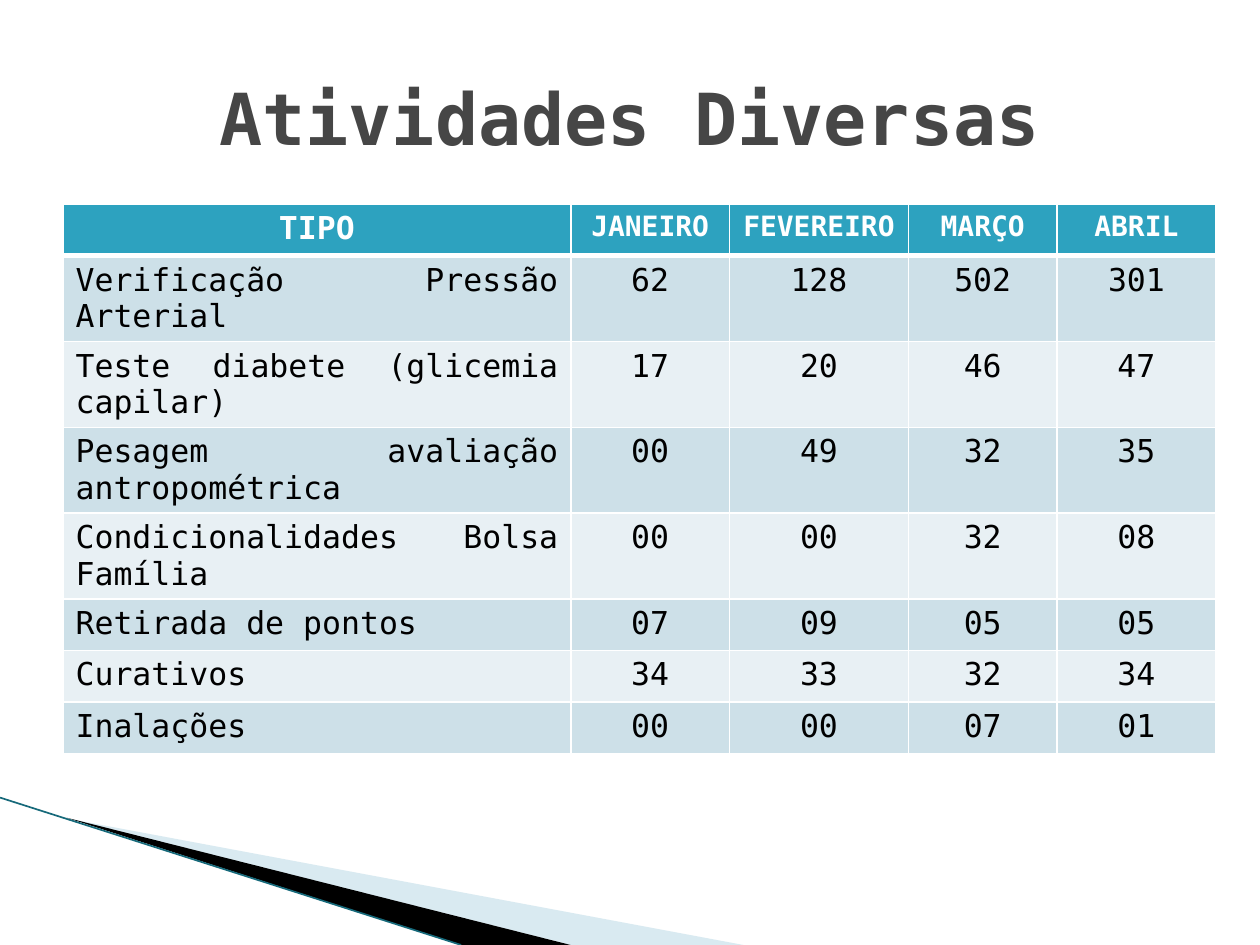
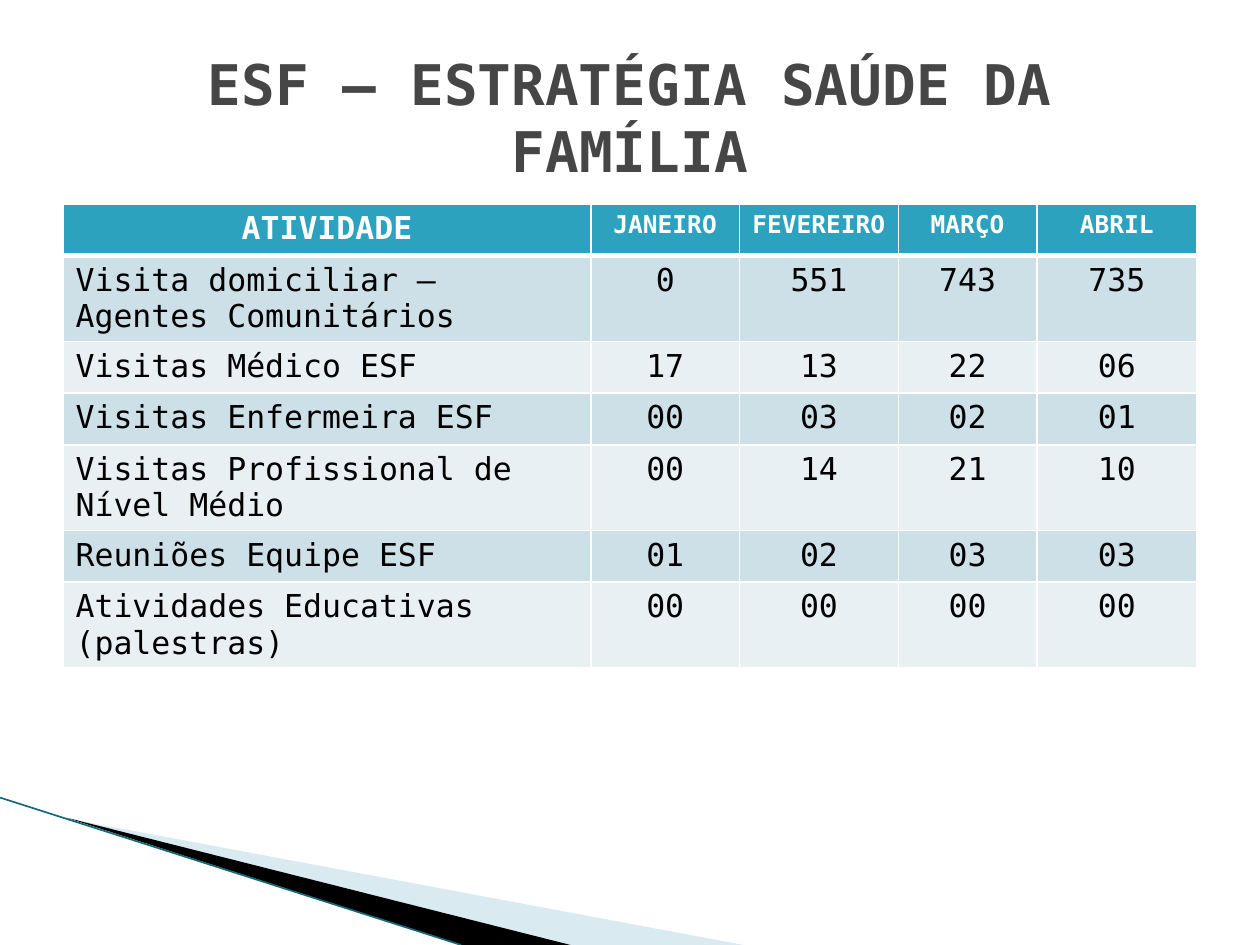
from dataclasses import dataclass

from lxml.etree import SubElement
from pptx import Presentation
from pptx.dml.color import RGBColor
from pptx.enum.shapes import MSO_CONNECTOR
from pptx.enum.text import MSO_ANCHOR, PP_ALIGN
from pptx.oxml.ns import qn
from pptx.util import Inches, Pt


@dataclass(frozen=True)
class Theme:
    font: str = "DejaVu Sans Mono"
    title: str = "464646"
    header: str = "2DA2BF"
    bands: tuple = ("CDE0E8", "E8F0F4")
    body: str = "000000"
    white: str = "FFFFFF"
    wedge_light: str = "A0CBDC"
    wedge_dark: str = "000000"
    edge: str = "16697A"
    text_size: int = 18
    border: int = 1
    header_border: int = 3


THEME = Theme()
TITLE_BOX = (0.5, 0.3, 9, 1.25)
TABLE_LEFT, TABLE_TOP, ROW_HEIGHT = 0.5, 1.62, 0.41
CORNER_BOX = (0, 6.33, 5.9, 1.17)
MONTHS = ["JANEIRO", "FEVEREIRO", "MARÇO", "ABRIL"]

DIVERSAS = [
    ("Verificação Pressão Arterial", "62", "128", "502", "301"),
    ("Teste diabete (glicemia capilar)", "17", "20", "46", "47"),
    ("Pesagem avaliação antropométrica", "00", "49", "32", "35"),
    ("Condicionalidades Bolsa Família", "00", "00", "32", "08"),
    ("Retirada de pontos", "07", "09", "05", "05"),
    ("Curativos", "34", "33", "32", "34"),
    ("Inalações", "00", "00", "07", "01"),
]
SAUDE_FAMILIA = [
    ("Visita domiciliar – Agentes Comunitários", "0", "551", "743", "735"),
    ("Visitas Médico ESF", "17", "13", "22", "06"),
    ("Visitas Enfermeira ESF", "00", "03", "02", "01"),
    ("Visitas Profissional de Nível Médio", "00", "14", "21", "10"),
    ("Reuniões Equipe ESF", "01", "02", "03", "03"),
    ("Atividades Educativas (palestras)", "00", "00", "00", "00"),
]


def rgb(color):
    return RGBColor.from_string(color)


def write(tf, text, size=THEME.text_size, color=THEME.body, bold=False,
          align=PP_ALIGN.CENTER):
    tf.word_wrap = True
    p = tf.paragraphs[0]
    p.alignment = align
    r = p.add_run()
    r.text = text
    r.font.name = THEME.font
    r.font.size = Pt(size)
    r.font.bold = bold
    r.font.color.rgb = rgb(color)


def add_wedge(slide, box, points, color, opacity=100):
    left, top = box[:2]
    pts = [(Inches(left + x), Inches(top + y)) for x, y in points]
    builder = slide.shapes.build_freeform(*pts[0])
    builder.add_line_segments(pts[1:])
    sp = builder.convert_to_shape()
    sp.shadow.inherit = False
    sp.line.fill.background()
    sp.fill.solid()
    sp.fill.fore_color.rgb = rgb(color)
    if opacity < 100:
        clr = sp.fill._xPr.find(qn("a:solidFill"))[0]
        SubElement(clr, qn("a:alpha")).set("val", str(opacity * 1000))


def add_corner(slide, box):
    """Wedges and thin edge in the lower left corner."""
    left, top, width, height = box
    add_wedge(slide, box, [(0.55, 0.17), (width, height), (4.53, height)],
              THEME.wedge_light, opacity=40)
    add_wedge(slide, box, [(0.53, 0.16), (4.53, height), (3.66, height)],
              THEME.wedge_dark)
    line = slide.shapes.add_connector(
        MSO_CONNECTOR.STRAIGHT, Inches(left), Inches(top),
        Inches(left + 3.66), Inches(top + height))
    line.line.color.rgb = rgb(THEME.edge)
    line.line.width = Pt(0.95)
    SubElement(line._element.spPr, qn("a:effectLst"))


def add_title(slide, box, text, size):
    tf = slide.shapes.add_textbox(*map(Inches, box)).text_frame
    tf.vertical_anchor = MSO_ANCHOR.MIDDLE
    write(tf, text, size, THEME.title, bold=True)


def style_cell(cell, fill, top, bottom):
    """White borders first, then the fill, as the schema orders them."""
    tc_pr = cell._tc.get_or_add_tcPr()
    widths = {"L": THEME.border, "R": THEME.border, "T": top, "B": bottom}
    for side, width in widths.items():
        ln = SubElement(tc_pr, qn(f"a:ln{side}"), w=str(Pt(width)))
        SubElement(SubElement(ln, qn("a:solidFill")), qn("a:srgbClr"),
                   val=THEME.white)
    cell.fill.solid()
    cell.fill.fore_color.rgb = rgb(fill)


def add_month_table(slide, left, top, label, rows, widths, month_size, label_align):
    records = [(label, *MONTHS), *rows]
    table = slide.shapes.add_table(
        len(records), len(widths), Inches(left), Inches(top),
        Inches(sum(widths)), Inches(ROW_HEIGHT * len(records))).table
    for column, width in zip(table.columns, widths):
        column.width = Inches(width)
    for i, record in enumerate(records):
        table.rows[i].height = Inches(ROW_HEIGHT)
        fill = THEME.bands[(i - 1) % 2] if i else THEME.header
        for j, text in enumerate(record):
            cell = table.cell(i, j)
            style_cell(cell, fill,
                       top=THEME.header_border if i == 1 else THEME.border,
                       bottom=THEME.header_border if i == 0 else THEME.border)
            if i == 0:
                write(cell.text_frame, text, month_size if j else THEME.text_size,
                      THEME.white, bold=True)
            else:
                write(cell.text_frame, text,
                      align=PP_ALIGN.CENTER if j else label_align)


def add_table_slide(prs, title, title_size, **table):
    slide = prs.slides.add_slide(prs.slide_layouts[6])
    add_corner(slide, CORNER_BOX)
    add_month_table(slide, TABLE_LEFT, TABLE_TOP, **table)
    add_title(slide, TITLE_BOX, title, title_size)


def main():
    prs = Presentation()
    prs.slide_width, prs.slide_height = Inches(10), Inches(7.5)
    add_table_slide(prs, "Atividades Diversas", 41, label="TIPO", rows=DIVERSAS,
                    widths=[4.03, 1.26, 1.42, 1.18, 1.26], month_size=16,
                    label_align=PP_ALIGN.JUSTIFY)
    add_table_slide(prs, "ESF – ESTRATÉGIA SAÚDE DA FAMÍLIA", 32,
                    label="ATIVIDADE", rows=SAUDE_FAMILIA,
                    widths=[4.19, 1.18, 1.26, 1.1, 1.27], month_size=14,
                    label_align=PP_ALIGN.LEFT)
    prs.save("out.pptx")


if __name__ == "__main__":
    main()
